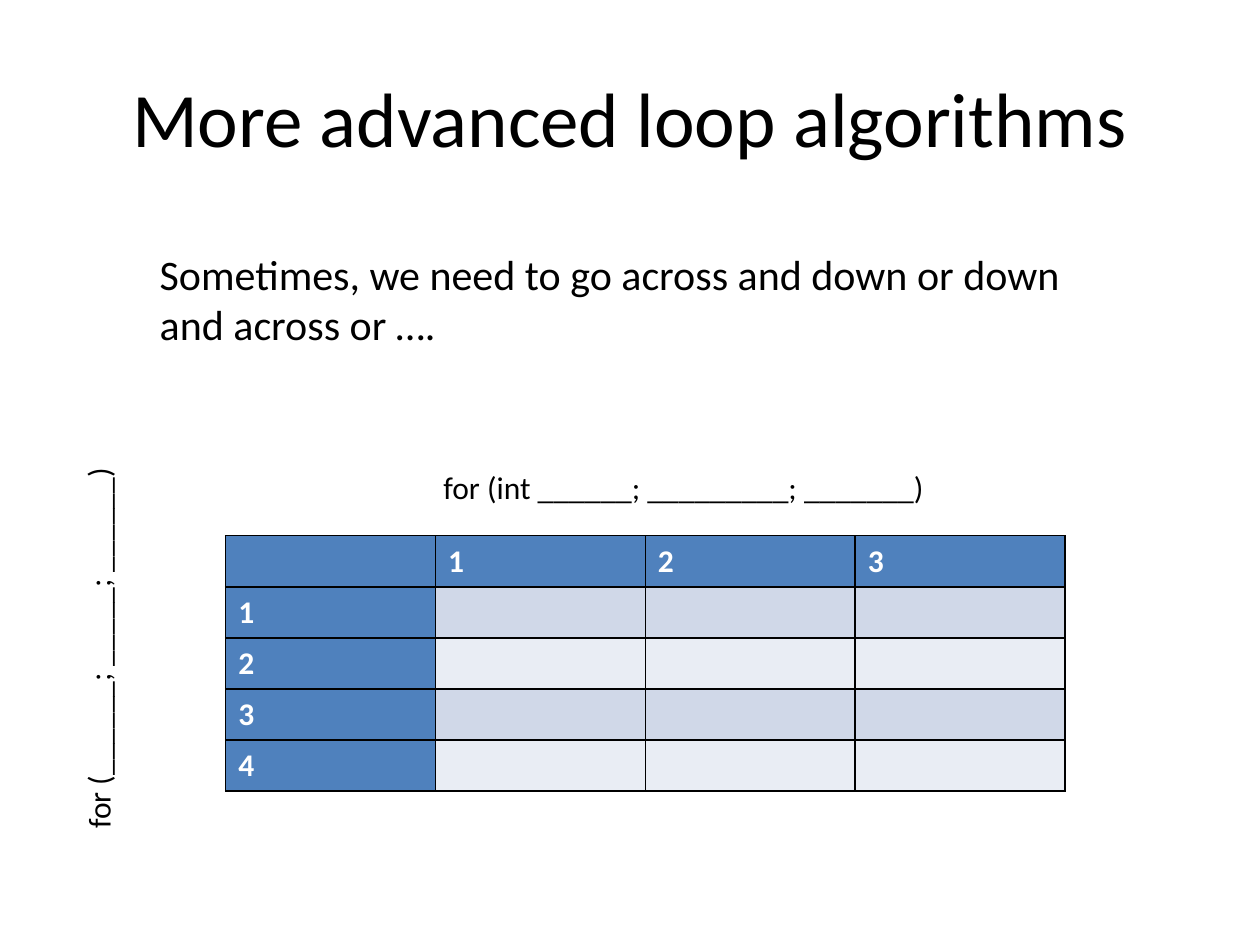
from lxml import etree
from pptx import Presentation
from pptx.dml.color import RGBColor
from pptx.enum import text
from pptx.oxml import ns
from pptx.util import Cm, Pt

FONT = "Calibri"
BLACK = RGBColor(0x00, 0x00, 0x00)
WHITE = RGBColor(0xFF, 0xFF, 0xFF)
HEADER_BLUE = RGBColor(0x4F, 0x81, 0xBD)
BAND_DARK = RGBColor(0xD0, 0xD8, 0xE8)
BAND_LIGHT = RGBColor(0xE9, 0xED, 0xF4)

COLUMN_LABELS = ["", "1", "2", "3"]
ROW_LABELS = ["", "1", "2", "3", "4"]
COLUMN_WIDTH = Cm(4.23)
ROW_HEIGHT = Cm(1.03)


def add_span(para, wording, size, color=BLACK, bold=False):
    span = para.add_run()
    span.text = wording
    span.font.name = FONT
    span.font.size = Pt(size)
    span.font.bold = bold
    span.font.color.rgb = color


def set_title(page, wording):
    title = page.shapes.title
    title.left, title.top, title.width, title.height = Cm(1.27), Cm(0.76), Cm(22.86), Cm(3.18)
    title.text_frame.vertical_anchor = text.MSO_ANCHOR.MIDDLE
    para = title.text_frame.paragraphs[0]
    para.alignment = text.PP_ALIGN.CENTER
    add_span(para, wording, 44)


def add_text(page, wording, size, left, top, width, height, upward=False):
    """Add a text box; upward turns its text to read from bottom to top."""
    box = page.shapes.add_textbox(left, top, width, height)
    frame = box.text_frame
    frame.word_wrap = True
    frame.auto_size = text.MSO_AUTO_SIZE.SHAPE_TO_FIT_TEXT
    if upward:
        frame._txBody.bodyPr.set("vert", "vert270")
    add_span(frame.paragraphs[0], wording, size)


def set_borders(cell, color=BLACK, width=Pt(1)):
    properties = cell._tc.get_or_add_tcPr()
    for index, side in enumerate(("a:lnL", "a:lnR", "a:lnT", "a:lnB")):
        line = etree.Element(ns.qn(side), w=str(width))
        fill = etree.SubElement(line, ns.qn("a:solidFill"))
        etree.SubElement(fill, ns.qn("a:srgbClr"), val=str(color))
        properties.insert(index, line)


def style_cell(cell, fill, label):
    cell.fill.solid()
    cell.fill.fore_color.rgb = fill
    set_borders(cell)
    para = cell.text_frame.paragraphs[0]
    para.font.size = Pt(18)
    if label:
        add_span(para, label, 18, WHITE, bold=True)


def add_grid(page, left, top):
    row_count, column_count = len(ROW_LABELS), len(COLUMN_LABELS)
    grid = page.shapes.add_table(
        row_count, column_count, left, top,
        COLUMN_WIDTH * column_count, ROW_HEIGHT * row_count,
    ).table
    grid.first_col = True
    for column in grid.columns:
        column.width = COLUMN_WIDTH
    for r, row in enumerate(grid.rows):
        row.height = ROW_HEIGHT
        band = BAND_DARK if r % 2 else BAND_LIGHT
        for c, cell in enumerate(row.cells):
            if r == 0:
                style_cell(cell, HEADER_BLUE, COLUMN_LABELS[c])
            elif c == 0:
                style_cell(cell, HEADER_BLUE, ROW_LABELS[r])
            else:
                style_cell(cell, band, "")


def main():
    deck = Presentation()
    deck.slide_width, deck.slide_height = Cm(25.4), Cm(19.05)
    page = deck.slides.add_slide(deck.slide_layouts[5])
    set_title(page, "More advanced loop algorithms")
    add_text(page, "Sometimes, we need to go across and down or down and across or ….",
             24, Cm(2.97), Cm(4.88), Cm(20.12), Cm(2.31))
    add_grid(page, Cm(4.55), Cm(10.8))
    add_text(page, "for (int ______; _________; _______)",
             18, Cm(8.69), Cm(9.32), Cm(12.5), Cm(1.02))
    add_text(page, "for (______; _____; ______)",
             18, Cm(1.47), Cm(8.76), Cm(1.27), Cm(8.2), upward=True)
    deck.save("out.pptx")


if __name__ == "__main__":
    main()
